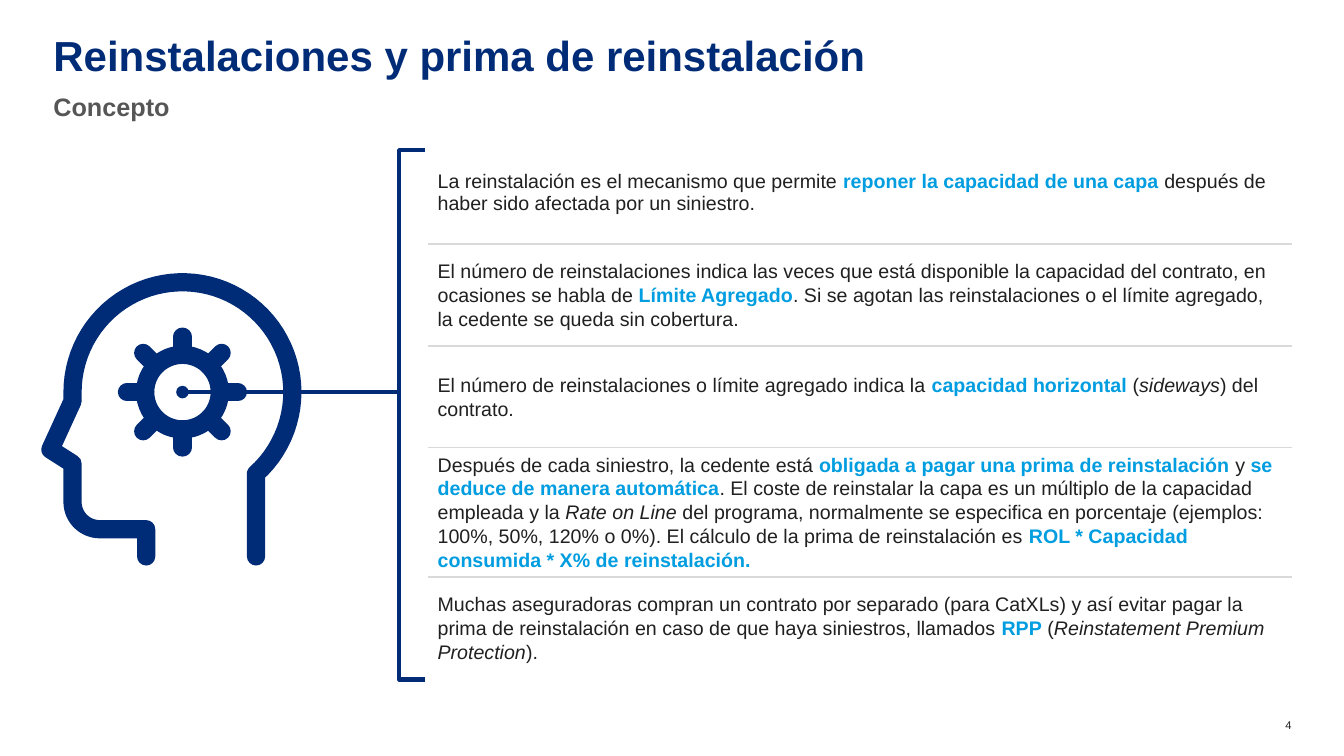
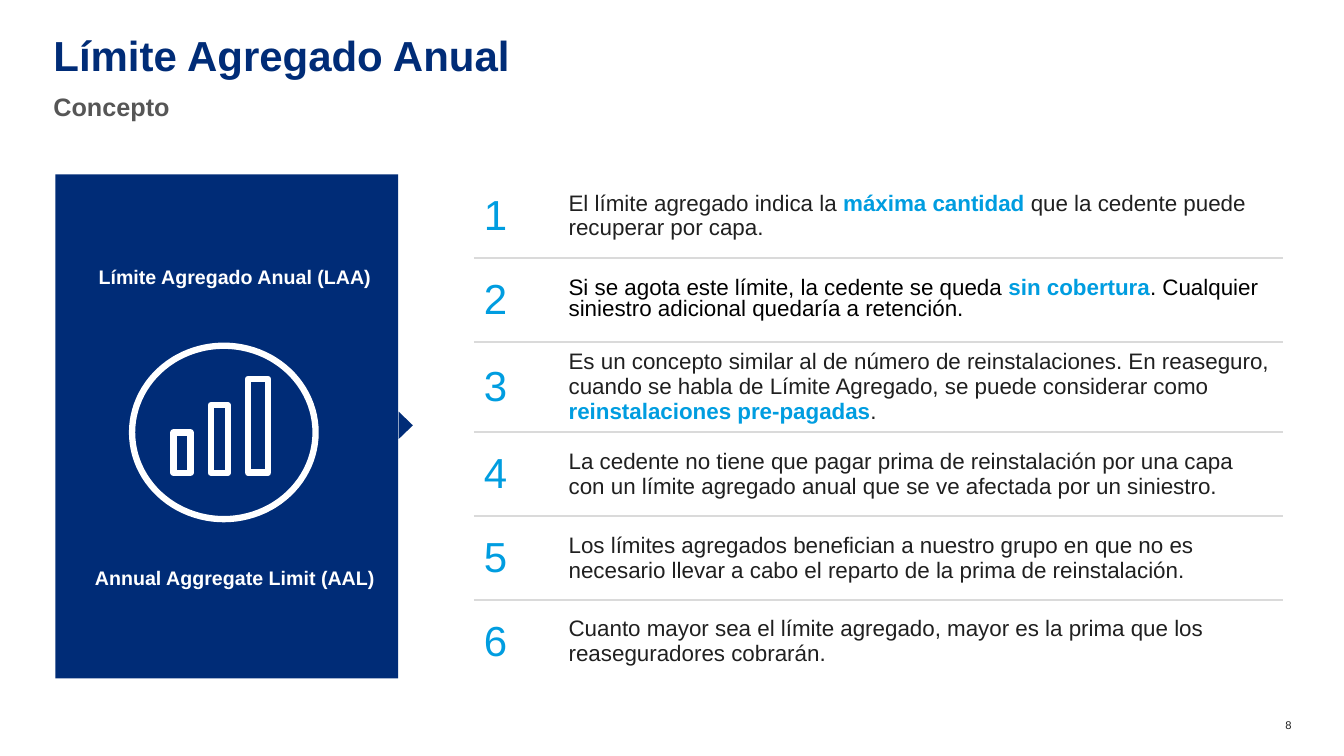
from math import cos, radians, sin

from lxml.etree import SubElement
from pptx import Presentation
from pptx.dml.color import RGBColor
from pptx.enum.shapes import MSO_CONNECTOR as CONN, MSO_SHAPE as SHAPE
from pptx.enum.text import MSO_ANCHOR as ANCHOR, PP_ALIGN as ALIGN
from pptx.oxml import parse_xml
from pptx.oxml.ns import nsdecls, qn
from pptx.util import Inches, Pt

NAVY, SKY, INK, GREY = "002C77", "009DE0", "202020", "565656"
WHITE, BLACK = "FFFFFF", "000000"
PEN = 13
EXACT = dict(line_spacing=Pt(17), space_after=Pt(12))


def rgb(value):
    return RGBColor.from_string(value)


def arc(cx, cy, radius, start, stop, step=4):
    angles = [radians(a) for a in (*range(start, stop, step), stop)]
    return [(cx + radius * cos(a), cy + radius * sin(a)) for a in angles]


class Deck:
    """Holds the shared style and the slide being built."""

    font = "Arial"

    def __init__(self):
        self.prs = Presentation()
        self.prs.slide_width = Inches(13.33)
        self.prs.slide_height = Inches(7.5)

    def slide(self, title, subtitle, number):
        self.s = self.prs.slides.add_slide(self.prs.slide_layouts[6])
        self.text((0.53, 0.39, 12.27, 0.54), title, 30, NAVY, True,
                  fmt=dict(line_spacing=0.8))
        self.text((0.53, 0.88, 12.28, 0.35), subtitle, 18, GREY, True,
                  anchor=ANCHOR.MIDDLE)
        self.text((12.5, 7.13, 0.31, 0.13), number, 8, INK,
                  fmt=dict(alignment=ALIGN.RIGHT))

    def run(self, p, text, size, color, bold=False, italic=False):
        r = p.add_run()
        r.text = text
        values = dict(name=self.font, size=Pt(size), bold=bold, italic=italic)
        for name, value in values.items():
            setattr(r.font, name, value)
        r.font.color.rgb = rgb(color)

    def fill_paragraph(self, p, parts, size, color, fmt):
        for name, value in fmt.items():
            setattr(p, name, value)
        for part in parts:
            if isinstance(part, str):
                self.run(p, part, size, color)
            elif part[1] == "key":
                self.run(p, part[0], size, SKY, bold=True)
            else:
                self.run(p, part[0], size, color, italic=True)

    def text(self, box, text, size, color, bold=False, fmt=None,
             anchor=ANCHOR.TOP):
        tf = self.s.shapes.add_textbox(*map(Inches, box)).text_frame
        tf.word_wrap = True
        tf.vertical_anchor = anchor
        for side in ("left", "right", "top", "bottom"):
            setattr(tf, f"margin_{side}", 0)
        p = tf.paragraphs[0]
        for name, value in (fmt or {}).items():
            setattr(p, name, value)
        self.run(p, text, size, color, bold)

    def paint(self, sp, fill=None, line=None, width=1, rounded=False):
        sp.shadow.inherit = False
        if fill:
            sp.fill.solid()
            sp.fill.fore_color.rgb = rgb(fill)
        else:
            sp.fill.background()
        if not line:
            sp.line.fill.background()
            return
        sp.line.color.rgb = rgb(line)
        sp.line.width = Pt(width)
        if rounded:
            ln = sp.element.spPr.find(qn("a:ln"))
            ln.set("cap", "rnd")
            SubElement(ln, qn("a:round"))

    def shape(self, kind, box, rotation=0, **style):
        sp = self.s.shapes.add_shape(kind, *map(Inches, box))
        sp.rotation = rotation
        self.paint(sp, **style)

    def strokes(self, contours, **style):
        contours = [[(Inches(x), Inches(y)) for x, y in c] for c in contours]
        fb = self.s.shapes.build_freeform(*contours[0][0])
        for i, contour in enumerate(contours):
            if i:
                fb.move_to(*contour[0])
            fb.add_line_segments(contour[1:], close=False)
        self.paint(fb.convert_to_shape(), **style)

    def pointer(self, start, end, color, width):
        sp = self.s.shapes.add_connector(
            CONN.STRAIGHT, *map(Inches, (*start, *end)))
        sp.line.color.rgb = rgb(color)
        sp.line.width = Pt(width)
        SubElement(sp.line._get_or_add_ln(), qn("a:headEnd"), type="oval")
        SubElement(sp.element.spPr, qn("a:effectLst"))

    def borders(self, cell, top, bottom, color):
        tc_pr = cell._tc.get_or_add_tcPr()
        sides = dict(lnL=False, lnR=False, lnT=top, lnB=bottom)
        for i, (side, shown) in enumerate(sides.items()):
            fill = (f'<a:solidFill><a:srgbClr val="{color}"/></a:solidFill>'
                    if shown else "<a:noFill/>")
            tc_pr.insert(i, parse_xml(
                f'<a:{side} {nsdecls("a")} w="{Pt(1.5)}">{fill}</a:{side}>'))

    def table(self, left, top, widths, heights, rows, rule):
        last = len(rows) - 1
        box = (left, top, sum(widths), sum(heights))
        tbl = self.s.shapes.add_table(
            len(rows), len(widths), *map(Inches, box)).table
        tbl.first_row = tbl.horz_banding = False
        for col, width in zip(tbl.columns, widths):
            col.width = Inches(width)
        for i, (row, height) in enumerate(zip(rows, heights)):
            tbl.rows[i].height = Inches(height)
            for j, (parts, size, color, fmt) in enumerate(row):
                cell = tbl.cell(i, j)
                cell.fill.background()
                cell.vertical_anchor = ANCHOR.MIDDLE
                self.borders(cell, i > 0, i < last, rule)
                self.fill_paragraph(cell.text_frame.paragraphs[0],
                                    parts, size, color, fmt)


def reinstatements(deck):
    deck.slide("Reinstalaciones y prima de reinstalación", "Concepto", "4")
    cx, cy = 1.81, 3.89
    deck.pointer((cx, cy), (3.94, cy), NAVY, 3)
    deck.strokes([[(4.22, 1.49), (3.96, 1.49), (3.96, 6.74), (4.22, 6.74)]],
                 line=NAVY, width=3)

    texts = [
        ["La reinstalación es el mecanismo que permite ",
         ("reponer la capacidad de una capa ", "key"),
         "después de haber sido afectada por un siniestro."],
        ["El número de reinstalaciones indica las veces que está disponible "
         "la capacidad del contrato, en ocasiones se habla de ",
         ("Límite Agregado", "key"),
         ". Si se agotan las reinstalaciones o el límite agregado, "
         "la cedente se queda sin cobertura."],
        ["El número de reinstalaciones o límite agregado indica la ",
         ("capacidad horizontal ", "key"), "(", ("sideways", "italic"),
         ") del contrato."],
        ["Después de cada siniestro, la cedente está ",
         ("obligada a pagar una prima de reinstalación ", "key"), "y ",
         ("se deduce de manera automática", "key"),
         ". El coste de reinstalar la capa es un múltiplo de la capacidad "
         "empleada y la ", ("Rate on Line ", "italic"),
         "del programa, normalmente se especifica en porcentaje (ejemplos: "
         "100%, 50%, 120% o 0%). El cálculo de la prima de reinstalación es ",
         ("ROL * Capacidad consumida * X% de reinstalación.", "key")],
        ["Muchas aseguradoras compran un contrato por separado (para CatXLs) "
         "y así evitar pagar la prima de reinstalación en caso de que haya "
         "siniestros, llamados ", ("RPP", "key"), " (",
         ("Reinstatement Premium Protection", "italic"), ")."],
    ]
    formats = [dict(space_after=Pt(6))] + [EXACT] * 4
    rows = [[(parts, 14, INK, fmt)] for parts, fmt in zip(texts, formats)]
    deck.table(4.24, 1.41, [8.57], [1.01, 1.01, 1.01, 1.28, 1.01], rows,
               "D9D9D9")

    pen = dict(line=NAVY, width=PEN, rounded=True)
    head = [(1.45, 5.52), (1.45, 5.25), *arc(0.99, 4.98, 0.27, 90, 180),
            (0.72, 4.6), (0.5, 4.46), (0.72, 3.98),
            *arc(cx, cy, 1.09, 180, 408), (2.54, 4.7), (2.54, 5.52)]
    deck.strokes([head], **pen)
    hub, tip = 0.37, 0.55
    teeth = [[(cx + d * cos(a), cy + d * sin(a)) for d in (hub, tip)]
             for a in map(radians, range(0, 360, 45))]
    deck.strokes(teeth, **pen)
    deck.shape(SHAPE.OVAL, (cx - hub, cy - hub, 2 * hub, 2 * hub), **pen)


def aggregate_limit(deck):
    deck.slide("Límite Agregado Anual", "Concepto", "8")
    deck.shape(SHAPE.RECTANGLE, (0.55, 1.73, 3.4, 5), fill=NAVY)
    deck.shape(SHAPE.ISOSCELES_TRIANGLE, (3.89, 4.15, 0.27, 0.14), 90,
               fill=NAVY)

    texts = [
        ["El límite agregado indica la ", ("máxima cantidad ", "key"),
         "que la cedente puede recuperar por capa."],
        ["Si se agota este límite, la cedente se queda ",
         ("sin cobertura", "key"),
         ". Cualquier siniestro adicional quedaría a retención."],
        ["Es un concepto similar al de número de reinstalaciones. En "
         "reaseguro, cuando se habla de Límite Agregado, se puede considerar "
         "como ", ("reinstalaciones pre-pagadas", "key"), "."],
        ["La cedente no tiene que pagar prima de reinstalación por una capa "
         "con un límite agregado anual que se ve afectada por un siniestro."],
        ["Los límites agregados benefician a nuestro grupo en que no es "
         "necesario llevar a cabo el reparto de la prima de reinstalación."],
        ["Cuanto mayor sea el límite agregado, mayor es la prima que los "
         "reaseguradores cobrarán."],
    ]
    tight = dict(line_spacing=0.86, space_after=Pt(24))
    styles = [(INK, EXACT), (BLACK, tight)] + [(INK, {})] * 4
    rows = [[([str(n)], 30, SKY, {}), (parts, 16, color, fmt)]
            for n, (parts, (color, fmt)) in enumerate(zip(texts, styles), 1)]
    deck.table(4.7, 1.73, [0.84, 7.19], [0.83, 0.83, 0.9, 0.83, 0.83, 0.83],
               rows, "DADADA")

    base = 4.69
    for left, top, width in ((1.72, 4.29, 0.17), (2.09, 4.02, 0.17),
                             (2.46, 3.76, 0.2)):
        deck.shape(SHAPE.RECTANGLE, (left, top, width, base - top),
                   line=WHITE, width=4.5, rounded=True)
    deck.shape(SHAPE.OVAL, (1.31, 3.43, 1.82, 1.72), line=WHITE, width=4.5)
    for top, label in ((2.63, "Límite Agregado Anual (LAA)"),
                       (5.61, "Annual Aggregate Limit (AAL)")):
        deck.text((0.92, top, 2.82, 0.24), label, 14, WHITE, True,
                  fmt=dict(alignment=ALIGN.CENTER))


def main():
    deck = Deck()
    reinstatements(deck)
    aggregate_limit(deck)
    deck.prs.save("out.pptx")


if __name__ == "__main__":
    main()
